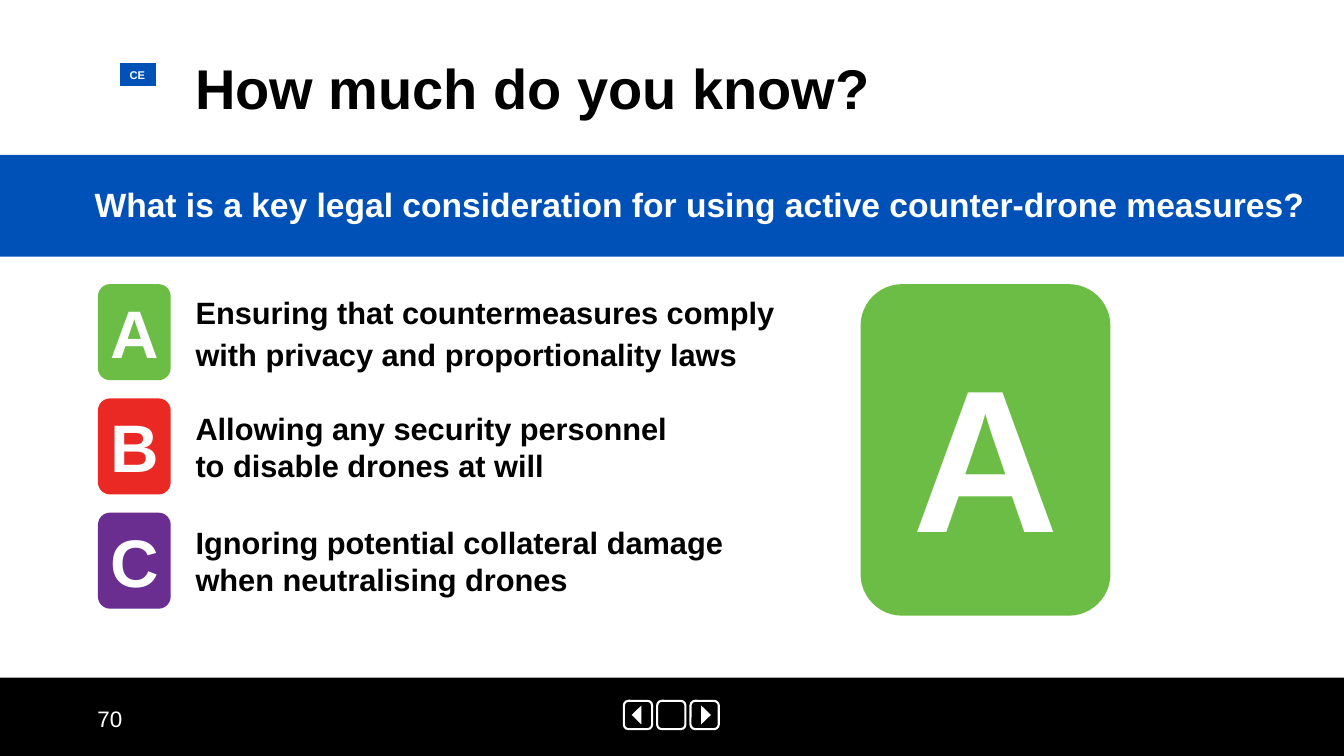
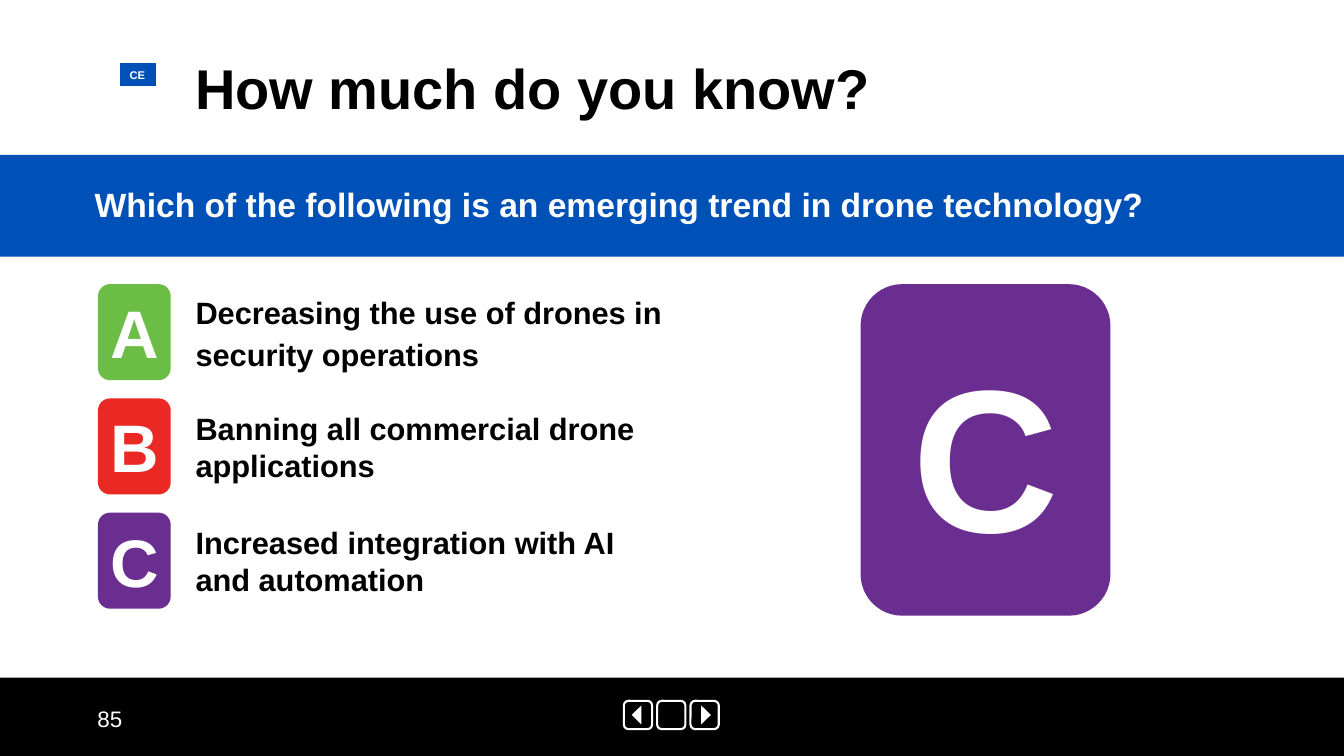
from dataclasses import dataclass
from pptx import Presentation
from pptx.dml.color import RGBColor as Rgb
from pptx.enum.shapes import MSO_SHAPE as Kind
from pptx.enum.text import MSO_ANCHOR as Anchor, PP_ALIGN as Align
from pptx.util import Pt


@dataclass(frozen=True)
class Theme:
    font: str = "Arial"
    white: str = "FFFFFF"
    black: str = "000000"
    blue: str = "0051B7"
    tiles: tuple = (("A", "6CBD45"), ("B", "EA2925"), ("C", "6A2E91"))
    title: int = 40
    ask: int = 24
    option: int = 22
    letter: int = 48
    answer: int = 145
    page: int = 16
    tag: int = 8


T = Theme()
WIDE, HIGH = 960, 540

QUIZ = [
    dict(page="70", right=0,
         ask="What is a key legal consideration for using active counter-drone measures?",
         options=[("Ensuring that countermeasures comply with privacy and proportionality laws", 467),
                  ("Allowing any security personnel to disable drones at will", 376),
                  ("Ignoring potential collateral damage when neutralising drones", 402)]),
    dict(page="85", right=2,
         ask="Which of the following is an emerging trend in drone technology?",
         options=[("Decreasing the use of drones in security operations", 356),
                  ("Banning all commercial drone applications", 411),
                  ("Increased integration with AI and automation", 343)]),
]


def paint(shape, fill, line=None, width=1.5):
    shape.shadow.inherit = False
    shape.fill.solid()
    shape.fill.fore_color.rgb = Rgb.from_string(fill)
    if line:
        shape.line.color.rgb = Rgb.from_string(line)
        shape.line.width = Pt(width)
    else:
        shape.line.fill.background()


def block(slide, kind, box, fill, line=None, width=1.5):
    shape = slide.shapes.add_shape(kind, *map(Pt, box))
    paint(shape, fill, line, width)
    return shape


def write(shape, text, size, color=T.white, bold=True, align=Align.LEFT,
          anchor=Anchor.TOP, space=None):
    frame = shape.text_frame
    frame.word_wrap = True
    frame.vertical_anchor = anchor
    para = frame.paragraphs[0]
    para.alignment = align
    if space:
        para.line_spacing = space
    run = para.add_run()
    run.text = text
    font = run.font
    font.name, font.size, font.bold = T.font, Pt(size), bold
    font.color.rgb = Rgb.from_string(color)
    return frame


def label(slide, box, text, size, **look):
    return write(slide.shapes.add_textbox(*map(Pt, box)), text, size, **look)


def tile(slide, box, letter, fill, size):
    shape = block(slide, Kind.ROUNDED_RECTANGLE, box, fill)
    frame = write(shape, letter, size, align=Align.CENTER,
                  anchor=Anchor.MIDDLE, space=0.9)
    frame.margin_left = frame.margin_right = frame.margin_bottom = 0
    # The letter sits a little below the middle
    frame.margin_top = Pt(box[3] * 0.1)


def arrow(slide, x, y, way):
    """Triangle centred on x, y; way is -1 for left and 1 for right."""
    back, tip = x - way * 3.5, x + way * 3.5
    pen = slide.shapes.build_freeform(Pt(back), Pt(y - 6.8))
    pen.add_line_segments([(Pt(tip), Pt(y)), (Pt(back), Pt(y + 6.8))], close=True)
    paint(pen.convert_to_shape(), T.white)


def footer(slide, box, page):
    x, y, w, h = box
    block(slide, Kind.RECTANGLE, box, T.black)
    # Three buttons in the middle, arrows on the outer two
    side, step, mid = 20.2, 23.8, y + 26.7
    for way in (-1, 0, 1):
        cx = x + w / 2 + way * step - 0.5
        block(slide, Kind.ROUNDED_RECTANGLE,
              (cx - side / 2, mid - side / 2, side, side), T.black, T.white)
        if way:
            arrow(slide, cx + way, mid, way)
    label(slide, (x + 62.5, y + 16, 216, 29), page, T.page, bold=False)


def header(slide, box):
    x, y, w, h = box
    label(slide, (x + 132.5, y, w - 198, h), "How much do you know?", T.title,
          color=T.black, anchor=Anchor.MIDDLE, space=0.9)
    # Small tag left of the title
    tag = block(slide, Kind.RECTANGLE, (x + 85.5, y + 16, 26.5, 17),
                T.blue, T.white, 0.75)
    frame = write(tag, "CE", T.tag, anchor=Anchor.MIDDLE)
    frame.margin_top = frame.margin_bottom = 0
    frame.margin_right = 0


def band(slide, box, ask):
    x, y, w, h = box
    block(slide, Kind.RECTANGLE, box, T.blue)
    label(slide, (x + 60.5, y + 16.8, w - 74, 36), ask, T.ask)


def choices(slide, box, options):
    x, y, w, h = box
    high = 68.6
    step = (h - high) / (len(options) - 1)
    for row, ((letter, fill), (text, width)) in enumerate(zip(T.tiles, options)):
        top = y + row * step
        tile(slide, (x, top, 52, high), letter, fill, T.letter)
        # The first option has wider lines
        drop, space = (4.3, None) if row else (0, Pt(30))
        label(slide, (x + 62.6, top + drop, width, 60), text, T.option,
              color=T.black, space=space)


def quiz(deck, item):
    slide = deck.slides.add_slide(deck.slide_layouts[6])
    footer(slide, (0, 484, WIDE, HIGH - 484), item["page"])
    header(slide, (0, 28.8, WIDE, 72.7))
    band(slide, (0, 110.7, WIDE, 72.7), item["ask"])
    choices(slide, (70, 203, 530, 231.8), item["options"])
    tile(slide, (614.7, 203, 178.5, 236.8), *T.tiles[item["right"]], T.answer)


def main():
    deck = Presentation()
    deck.slide_width, deck.slide_height = Pt(WIDE), Pt(HIGH)
    for item in QUIZ:
        quiz(deck, item)
    deck.save("out.pptx")


if __name__ == "__main__":
    main()
